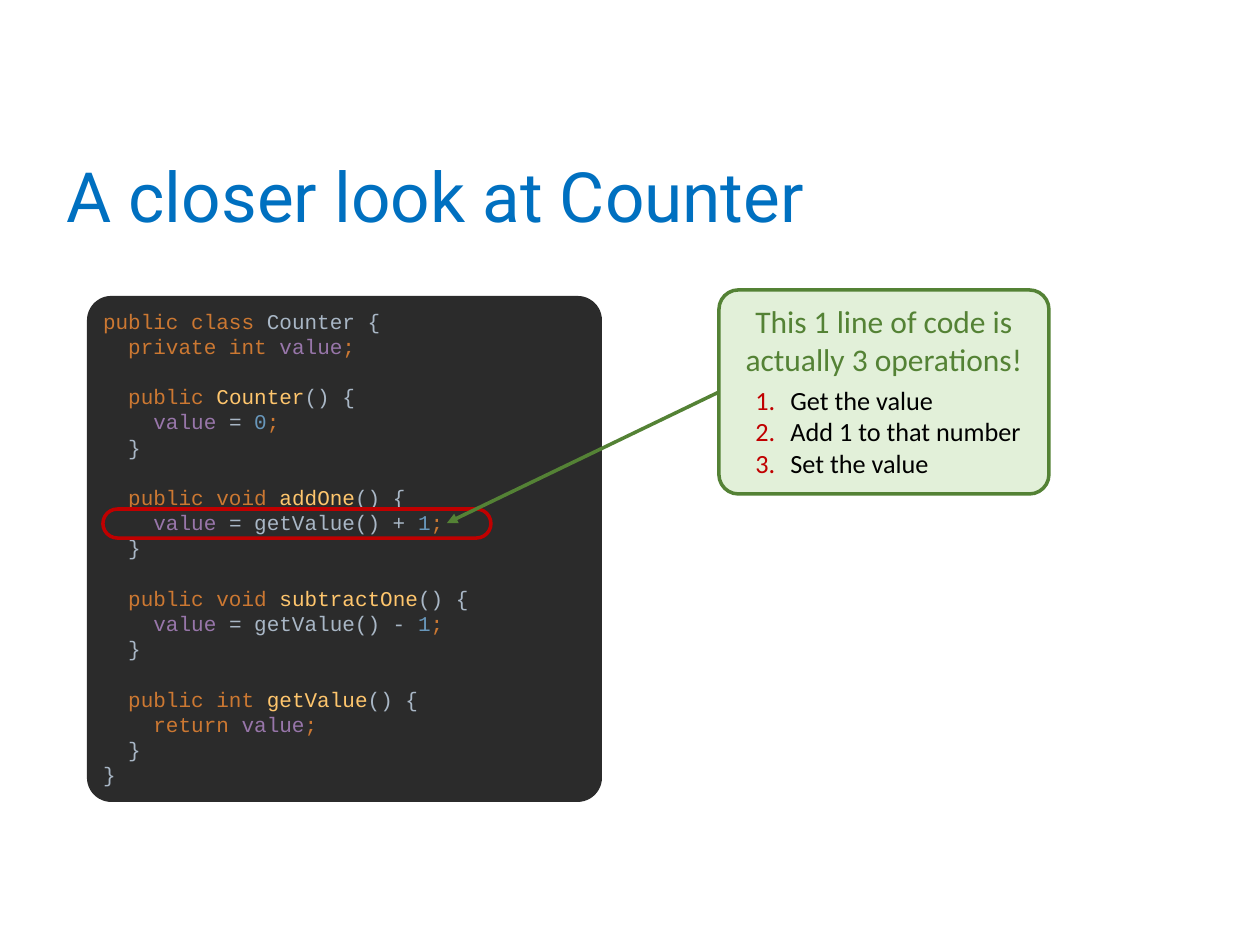
from lxml import etree
from pptx import Presentation
from pptx.dml.color import RGBColor
from pptx.enum.shapes import MSO_CONNECTOR, MSO_SHAPE
from pptx.enum.text import MSO_ANCHOR, MSO_AUTO_SIZE, PP_ALIGN
from pptx.oxml.ns import qn
from pptx.util import Emu, Pt

ROUND_RECT = MSO_SHAPE.ROUNDED_RECTANGLE
STRAIGHT = MSO_CONNECTOR.STRAIGHT
TOP, MIDDLE = MSO_ANCHOR.TOP, MSO_ANCHOR.MIDDLE
LEFT, CENTER = PP_ALIGN.LEFT, PP_ALIGN.CENTER
GROW = MSO_AUTO_SIZE.SHAPE_TO_FIT_TEXT
PX = 914400 / 126

GREEN, RED = "548235", "C00000"
KEYWORD, PLAIN, FIELD = "CC7832", "A9B7C6", "9876AA"
METHOD, NUMBER = "FFC66D", "6897BB"


def px(*lengths):
    return [Emu(round(n * PX)) for n in lengths]


def rgb(color):
    return RGBColor.from_string(color)


prs = Presentation()
prs.slide_width, prs.slide_height = px(1260, 945)
s = prs.slides.add_slide(prs.slide_layouts[6])

# Title
title = s.shapes.add_textbox(*px(54, 156, 1120, 89))
tf = title.text_frame
tf.word_wrap = True
tf.vertical_anchor = MIDDLE
p = tf.paragraphs[0]
p.line_spacing = 0.9
r = p.add_run()
r.text = "A closer look at Counter"
r.font.name, r.font.size = "Roboto", Pt(39.6)
r.font.color.rgb = rgb("0070C0")

# Rounded boxes: code panel, ring round one line, callout
boxes = []
for box, radius, fill, line in [
    ((87, 296, 515, 506), 0.048, "2B2B2B", None),
    ((103, 509, 388, 29), 0.5, None, RED),
    ((719, 290, 330, 204), 0.095, "E2F0D9", GREEN),
]:
    sp = s.shapes.add_shape(ROUND_RECT, *px(*box))
    sp.shadow.inherit = False
    sp.adjustments[0] = radius
    if fill:
        sp.fill.solid()
        sp.fill.fore_color.rgb = rgb(fill)
    else:
        sp.fill.background()
    if line:
        sp.line.color.rgb = rgb(line)
        sp.line.width = Pt(2)
    else:
        sp.line.fill.background()
    sp.text_frame.word_wrap = True
    sp.text_frame.vertical_anchor = TOP
    boxes.append(sp)
panel, ring, callout = boxes

# Code
code = [
    [(KEYWORD, "public class "), (PLAIN, "Counter {")],
    [(KEYWORD, "  private int "), (FIELD, "value"), (KEYWORD, ";")],
    [],
    [(KEYWORD, "  public "), (METHOD, "Counter"), (PLAIN, "() {")],
    [(FIELD, "    value "), (PLAIN, "= "), (NUMBER, "0"), (KEYWORD, ";")],
    [(PLAIN, "  }")],
    [],
]
for name, sign in [("addOne", "+"), ("subtractOne", "-")]:
    code += [
        [(KEYWORD, "  public void "), (METHOD, name), (PLAIN, "() {")],
        [(FIELD, "    value "), (PLAIN, f"= getValue() {sign} "),
         (NUMBER, "1"), (KEYWORD, ";")],
        [(PLAIN, "  }")],
        [],
    ]
code += [
    [(KEYWORD, "  public int "), (METHOD, "getValue"), (PLAIN, "() {")],
    [(KEYWORD, "    return "), (FIELD, "value"), (KEYWORD, ";")],
    [(PLAIN, "  }")],
    [(PLAIN, "}")],
]

tf = panel.text_frame
margins = dict(zip(("margin_left", "margin_top", "margin_right", "margin_bottom"),
                   px(9, 5, 9, 5)))
for key, value in margins.items():
    setattr(tf, key, value)
p = tf.paragraphs[0]
p.alignment = LEFT
for i, tokens in enumerate(code):
    if i:
        p.add_line_break()
        # The break carries the code font so that empty lines keep their height
        props = etree.SubElement(p._p[-1], qn("a:rPr"), sz="1200")
        etree.SubElement(props, qn("a:latin"), typeface="Courier New")
    for color, text in tokens:
        r = p.add_run()
        r.text = text
        r.font.name, r.font.size = "Courier New", Pt(12)
        r.font.color.rgb = rgb(color)

# Arrow from the callout to the ringed line
arrow = s.shapes.add_connector(STRAIGHT, *px(719, 392, 447, 523))
arrow.begin_connect(callout, 1)
arrow.line.color.rgb = rgb(GREEN)
arrow.line.width = Pt(2)
etree.SubElement(arrow.line._get_or_add_ln(), qn("a:tailEnd"), type="triangle")
etree.SubElement(arrow._element.spPr, qn("a:effectLst"))

# Callout heading
p = callout.text_frame.paragraphs[0]
p.alignment = CENTER
r = p.add_run()
r.text = "This 1 line of code is actually 3 operations!"
r.font.name, r.font.size = "Calibri", Pt(18)
r.font.color.rgb = rgb(GREEN)

# Numbered operations
steps = s.shapes.add_textbox(*px(743, 378, 294, 108))
tf = steps.text_frame
tf.word_wrap = False
tf.auto_size = GROW
indent = px(35)[0]
for i, text in enumerate(["Get the value", "Add 1 to that number", "Set the value"]):
    p = tf.add_paragraph() if i else tf.paragraphs[0]
    pPr = p._p.get_or_add_pPr()
    pPr.set("marL", str(indent))
    pPr.set("indent", str(-indent))
    bullet_color = etree.SubElement(pPr, qn("a:buClr"))
    etree.SubElement(bullet_color, qn("a:srgbClr"), val=RED)
    etree.SubElement(pPr, qn("a:buFont"), typeface="+mj-lt")
    etree.SubElement(pPr, qn("a:buAutoNum"), type="arabicPeriod")
    r = p.add_run()
    r.text = text
    r.font.name, r.font.size = "Calibri", Pt(15)
    r.font.color.rgb = rgb("000000")

prs.save("out.pptx")
